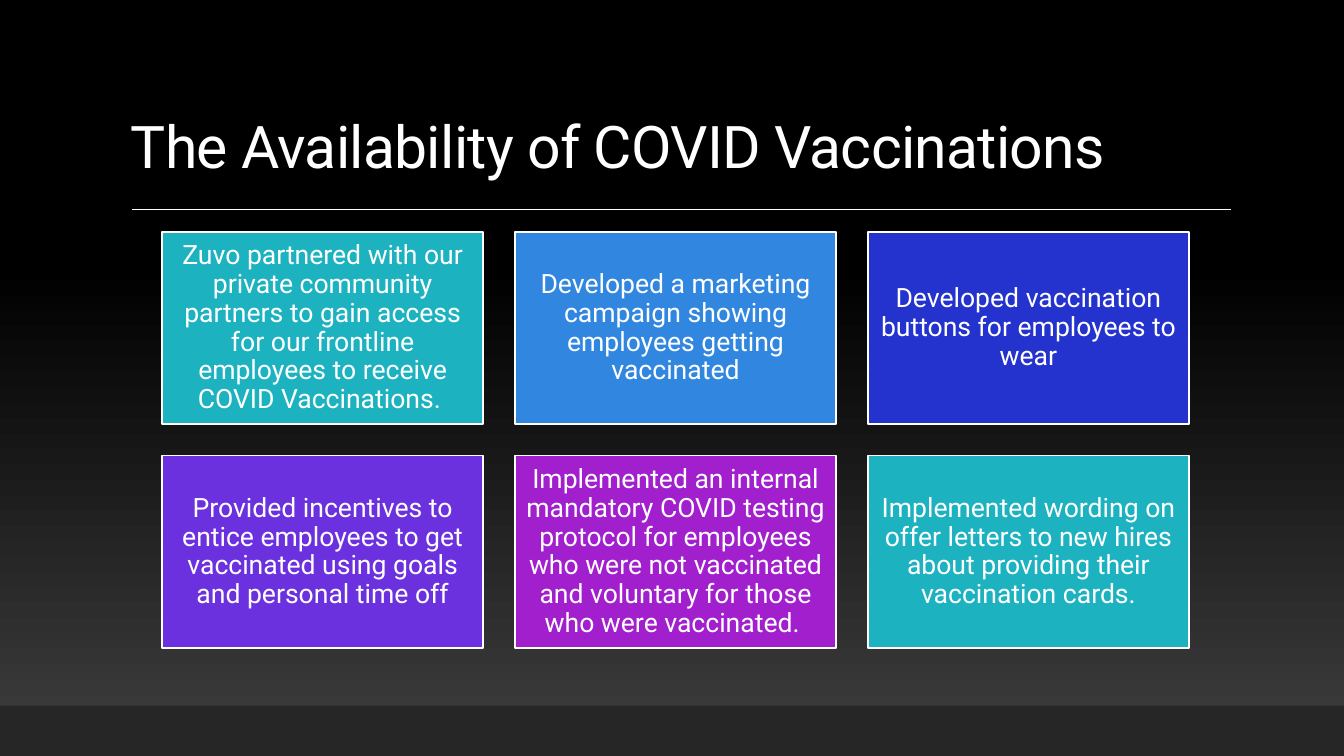
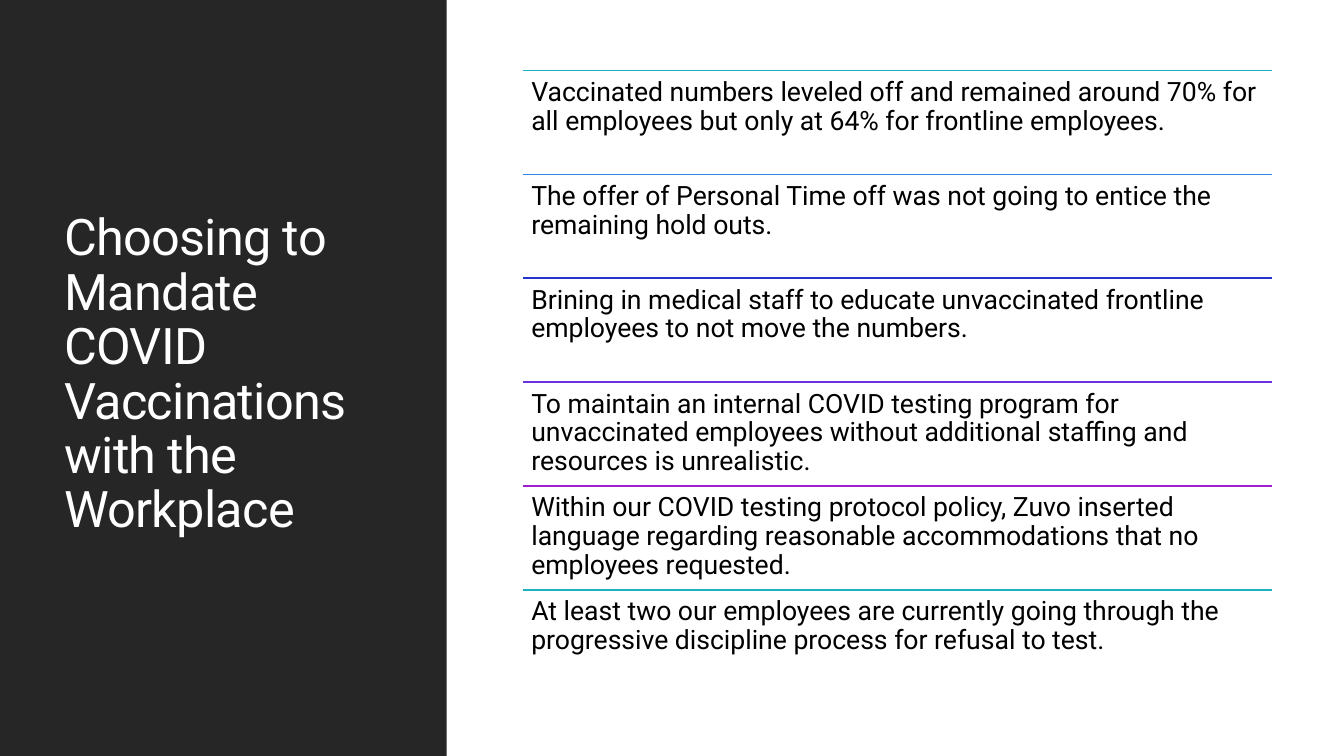
from pptx import Presentation
from pptx import util as u
from pptx.dml.color import RGBColor
from pptx.enum import shapes, text
from pptx.oxml.ns import qn
from lxml import etree

PX = 9144
WIDTH, HEIGHT = 1333, 750
FACE = "Roboto"
WHITE = RGBColor(0xFF, 0xFF, 0xFF)
BLACK = RGBColor(0, 0, 0)
SMOKE = RGBColor(0x3F, 0x3F, 0x3F)
COAL = RGBColor(0x26, 0x26, 0x26)
TEAL = RGBColor(0x1D, 0xB2, 0xC0)
SKY = RGBColor(0x31, 0x87, 0xDF)
NAVY = RGBColor(0x24, 0x32, 0xCE)
VIOLET = RGBColor(0x6C, 0x31, 0xDF)
PURPLE = RGBColor(0xA2, 0x1F, 0xCD)
HUES = [TEAL, SKY, NAVY, VIOLET, PURPLE]

TOP = text.MSO_ANCHOR.TOP
MIDDLE = text.MSO_ANCHOR.MIDDLE
BOTTOM = text.MSO_ANCHOR.BOTTOM
LEFT = text.PP_ALIGN.LEFT
CENTER = text.PP_ALIGN.CENTER

ACTIONS = [
    "Zuvo partnered with our private community partners to gain access for our frontline employees to receive COVID Vaccinations. ",
    "Developed a marketing campaign showing employees getting vaccinated",
    "Developed vaccination buttons for employees to wear",
    "Provided incentives to entice employees to get vaccinated using goals and personal time off",
    "Implemented an internal mandatory COVID testing protocol for employees who were not vaccinated and voluntary for those who were vaccinated. ",
    "Implemented wording on offer letters to new hires about providing their vaccination cards.",
]
REASONS = [
    "Vaccinated numbers leveled off and remained around 70% for all employees but only at 64% for frontline employees.",
    "The offer of Personal Time off was not going to entice the remaining hold outs.",
    "Brining in medical staff to educate unvaccinated frontline employees to not move the numbers.",
    "To maintain an internal COVID testing program for unvaccinated employees without additional staffing and resources is unrealistic.",
    "Within our COVID testing protocol policy, Zuvo inserted language regarding reasonable accommodations that no employees requested.",
    "At least two our employees are currently going through the progressive discipline process for refusal to test.",
]


def scale(*sizes):
    return [size * PX for size in sizes]


def assign(target, values):
    for name, value in values.items():
        setattr(target, name, value)


def write(shape, words, size, color=WHITE, anchor=TOP, align=LEFT, inset=8):
    frame = shape.text_frame
    assign(frame, {"word_wrap": True, "vertical_anchor": anchor})
    assign(frame, {f"margin_{side}": inset * PX
                   for side in ("left", "right", "top", "bottom")})
    para = frame.paragraphs[0]
    assign(para, {"alignment": align, "line_spacing": 0.9})
    run = para.add_run()
    run.text = words
    assign(run.font, {"name": FACE, "size": u.Pt(size)})
    run.font.color.rgb = color
    return run


def label(slide, box, words, size, **style):
    return write(slide.shapes.add_textbox(*scale(*box)), words, size, **style)


def title(slide, box, words, size, anchor):
    run = label(slide, box, words, size, anchor=anchor, inset=10)
    run.font._element.set("spc", "-50")


def block(slide, box, fill, edge=None):
    shape = slide.shapes.add_shape(shapes.MSO_SHAPE.RECTANGLE, *scale(*box))
    shape.shadow.inherit = False
    shape.fill.solid()
    shape.fill.fore_color.rgb = fill
    if edge is None:
        shape.line.fill.background()
    else:
        shape.line.color.rgb = edge
        shape.line.width = u.Pt(1.25)
    return shape


def rule(slide, left, right, top, color, width):
    line = slide.shapes.add_connector(
        shapes.MSO_CONNECTOR.STRAIGHT, *scale(left, top, right, top))
    line.line.color.rgb = color
    line.line.width = u.Pt(width)
    etree.SubElement(line._element.spPr, qn("a:effectLst"))


def fade(slide):
    fill = slide.background.fill
    fill.gradient()
    fill.gradient_angle = 90
    for stop, color, place in zip(fill.gradient_stops, (SMOKE, BLACK), (0, 0.65)):
        stop.color.rgb = color
        stop.position = place


def cards(slide):
    fade(slide)
    title(slide, (120, 31, 1100, 159),
          "The Availability of COVID Vaccinations", 42, BOTTOM)
    rule(slide, 131, 1221, 208, WHITE, 1)
    block(slide, (0, 700, WIDTH, HEIGHT - 700), COAL)
    for index, words in enumerate(ACTIONS):
        row, col = divmod(index, 3)
        box = (161 + col * 350, 230 + row * 222, 318, 191)
        card = block(slide, box, HUES[index % len(HUES)], WHITE)
        write(card, words, 19, anchor=MIDDLE, align=CENTER)


def reasons(slide):
    block(slide, (0, 0, 443, HEIGHT), COAL)
    title(slide, (54, 57, 337, 631),
          "Choosing to Mandate COVID Vaccinations with the Workplace", 36, MIDDLE)
    left, wide, step = 519, 743, 103
    for index, words in enumerate(REASONS):
        top = 70 + index * step
        rule(slide, left, left + wide, top, HUES[index % len(HUES)], 1.25)
        label(slide, (left, top, wide, step), words, 19, color=BLACK)


def main():
    deck = Presentation()
    assign(deck, {"slide_width": WIDTH * PX, "slide_height": HEIGHT * PX})
    for build in (cards, reasons):
        build(deck.slides.add_slide(deck.slide_layouts[6]))
    deck.save("out.pptx")


if __name__ == "__main__":
    main()
